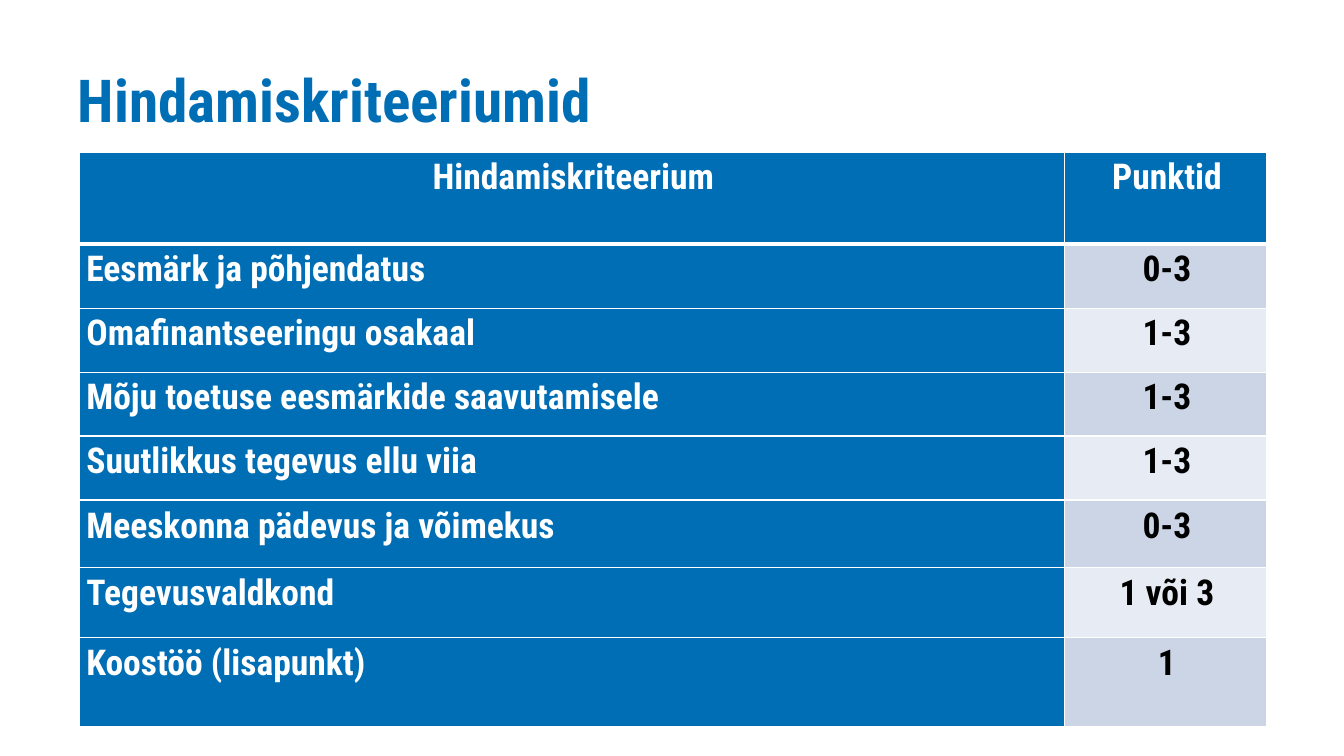
import lxml.etree
import pptx
import pptx.dml.color
import pptx.enum.text
import pptx.oxml.ns
import pptx.util

Pt = pptx.util.Pt
RGBColor = pptx.dml.color.RGBColor
CENTER = pptx.enum.text.PP_ALIGN.CENTER
LEFT = pptx.enum.text.PP_ALIGN.LEFT
TOP = pptx.enum.text.MSO_ANCHOR.TOP
qn = pptx.oxml.ns.qn

BLUE = RGBColor(0x00, 0x6E, 0xB5)
WHITE = RGBColor(0xFF, 0xFF, 0xFF)
BLACK = RGBColor(0x00, 0x00, 0x00)
BANDS = (RGBColor(0xE7, 0xEB, 0xF3), RGBColor(0xCC, 0xD5, 0xE5))

CRITERIA = [
    ("Hindamiskriteerium", "Punktid"),
    ("Eesmärk ja põhjendatus", "0-3"),
    ("Omafinantseeringu osakaal", "1-3"),
    ("Mõju toetuse eesmärkide saavutamisele", "1-3"),
    ("Suutlikkus tegevus ellu viia", "1-3"),
    ("Meeskonna pädevus ja võimekus", "0-3"),
    ("Tegevusvaldkond", "1 või 3"),
    ("Koostöö (lisapunkt)", "1"),
]
COLUMN_WIDTHS = (665.3, 136.1)
ROW_HEIGHTS = (61.9, 43.2, 43.2, 43.2, 43.2, 45.4, 47.5, 59.8)
FIRST_LOOSE_ROW = 5


class CriteriaSlide:
    font_name = "Roboto Condensed"

    def __init__(self, presentation):
        self.slide = presentation.slides.add_slide(presentation.slide_layouts[5])

    def style_paragraph(self, paragraph, size, color, alignment, line_spacing):
        paragraph.alignment = alignment
        paragraph.line_spacing = line_spacing
        font = paragraph.font
        font.name = self.font_name
        font.size = Pt(size)
        font.bold = True
        font.color.rgb = color

    def add_title(self, text, left, top, width, height):
        title = self.slide.shapes.title
        title.left, title.top = Pt(left), Pt(top)
        title.width, title.height = Pt(width), Pt(height)
        frame = title.text_frame
        frame.text = text
        frame.word_wrap = True
        frame.auto_size = pptx.enum.text.MSO_AUTO_SIZE.NONE
        frame.vertical_anchor = TOP
        frame.margin_left = frame.margin_right = Pt(7.2)
        frame.margin_top, frame.margin_bottom = Pt(4.3), Pt(3.6)
        self.style_paragraph(frame.paragraphs[0], 40, BLUE, LEFT, 0.88)

    def add_borders(self, cell, top, bottom):
        properties = cell._tc.get_or_add_tcPr()
        widths = {"a:lnL": 1, "a:lnR": 1, "a:lnT": top, "a:lnB": bottom}
        for index, (tag, width) in enumerate(widths.items()):
            line = lxml.etree.Element(qn(tag), w=str(Pt(width)))
            fill = lxml.etree.SubElement(line, qn("a:solidFill"))
            lxml.etree.SubElement(fill, qn("a:srgbClr"), val=str(WHITE))
            properties.insert(index, line)

    def fill_cell(self, cell, text, row, column):
        is_score = row > 0 and column == 1
        cell.text = text
        cell.vertical_anchor = TOP
        cell.margin_left, cell.margin_right = Pt(5), Pt(2.9)
        cell.margin_top, cell.margin_bottom = Pt(0.7), Pt(0)
        cell.fill.solid()
        cell.fill.fore_color.rgb = BANDS[row % 2] if is_score else BLUE
        self.add_borders(cell, 3 if row == 1 else 1, 3 if row == 0 else 1)
        paragraph = cell.text_frame.paragraphs[0]
        alignment = CENTER if row == 0 or column == 1 else LEFT
        line_spacing = 1.1 if row >= FIRST_LOOSE_ROW else 1.07
        self.style_paragraph(paragraph, 24, BLACK if is_score else WHITE,
                             alignment, line_spacing)
        if row < FIRST_LOOSE_ROW:
            paragraph.space_after = Pt(0.3)

    def add_table(self, rows, left, top, column_widths, row_heights):
        table = self.slide.shapes.add_table(
            len(rows), len(column_widths), Pt(left), Pt(top),
            Pt(sum(column_widths)), Pt(sum(row_heights))).table
        table.first_row = table.horz_banding = False
        for column, width in zip(table.columns, column_widths):
            column.width = Pt(width)
        for row_index, (texts, height) in enumerate(zip(rows, row_heights)):
            table.rows[row_index].height = Pt(height)
            for column_index, text in enumerate(texts):
                cell = table.cell(row_index, column_index)
                self.fill_cell(cell, text, row_index, column_index)


def main():
    presentation = pptx.Presentation()
    presentation.slide_width = Pt(907.2)
    presentation.slide_height = Pt(510.5)
    criteria_slide = CriteriaSlide(presentation)
    criteria_slide.add_title("Hindamiskriteeriumid", 45.4, 44.6, 845.3, 85)
    criteria_slide.add_table(CRITERIA, 53.3, 103, COLUMN_WIDTHS, ROW_HEIGHTS)
    presentation.save("out.pptx")


if __name__ == "__main__":
    main()
